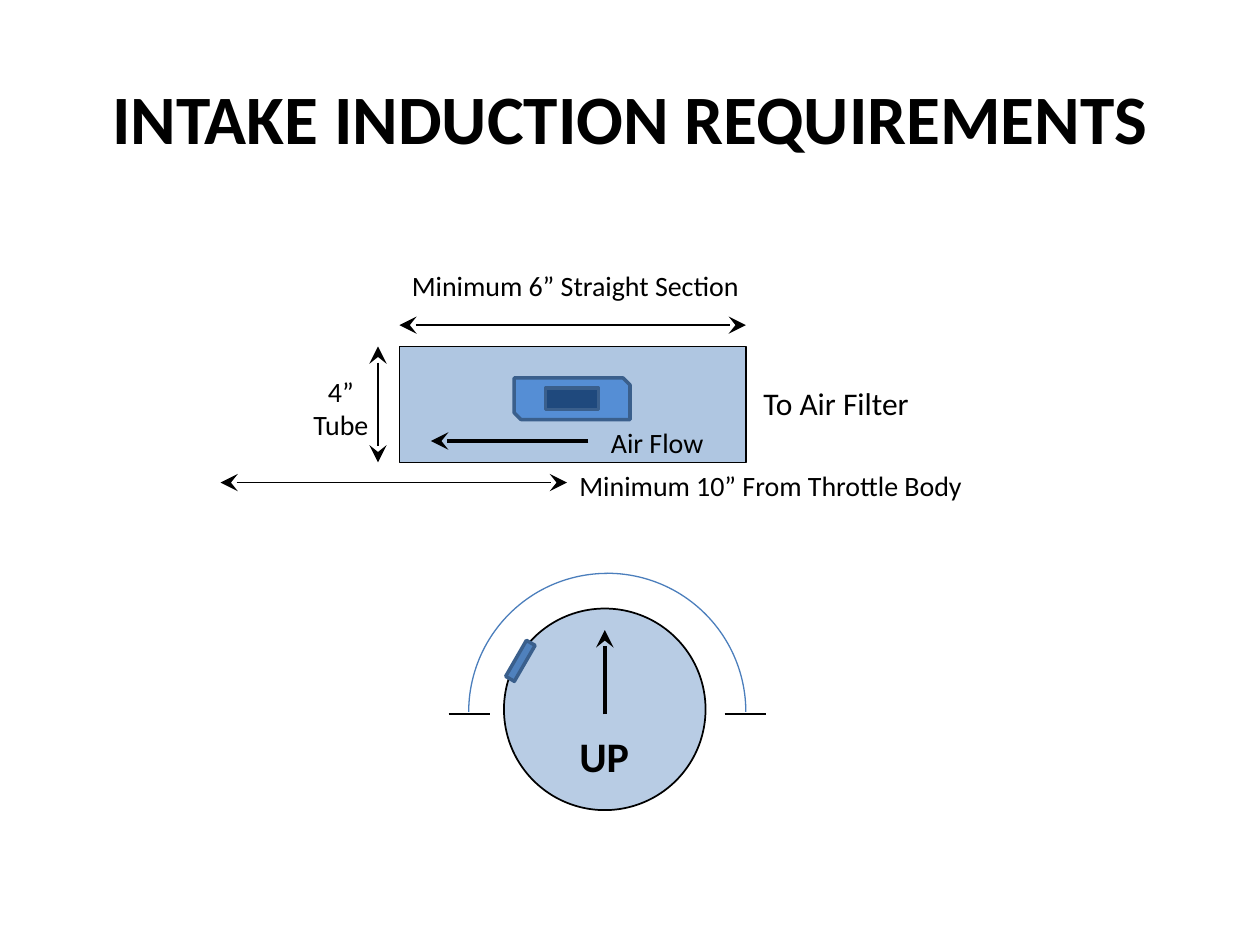
from lxml import etree
from pptx import Presentation
from pptx.dml.color import RGBColor
from pptx.enum.shapes import MSO_CONNECTOR, MSO_SHAPE as SHAPE
from pptx.enum.text import MSO_ANCHOR, PP_ALIGN
from pptx.oxml.ns import qn
from pptx.util import Inches, Pt


def color(value):
    return RGBColor.from_string(value)


prs = Presentation()
prs.slide_width, prs.slide_height = Inches(10), Inches(7.5)
s = prs.slides.add_slide(prs.slide_layouts[6])

# Tube with sensor, then tube cross-section:
# preset, left, top, width, height, rotation, fill, opacity %, line, line width
shapes = [
    (SHAPE.RECTANGLE, 3.17, 2.75, 2.75, 0.92, 0, "4F81BD", 45, "000000", 1),
    (SHAPE.SNIP_2_DIAG_RECTANGLE, 4.08, 3, 0.92, 0.33, 0, "558ED5", 100, "3A5F8C", 2),
    (SHAPE.RECTANGLE, 4.33, 3.08, 0.42, 0.17, 0, "1F497D", 100, "3A5F8C", 2),
    (SHAPE.ARC, 3.72, 4.55, 2.2, 2.2, 0, None, 100, "4B7EBC", 0.75),
    (SHAPE.ARC, 3.72, 4.55, 2.2, 2.2, 270, None, 100, "4B7EBC", 0.75),
    (SHAPE.OVAL, 4, 4.83, 1.6, 1.6, 0, "4F81BD", 40, "000000", 1),
    (SHAPE.RECTANGLE, 4.09, 5.08, 0.08, 0.33, 30, "4F81BD", 100, "3A5F8C", 2),
]
for preset, x, y, w, h, rotation, fill, opacity, line, width in shapes:
    sp = s.shapes.add_shape(preset, Inches(x), Inches(y), Inches(w), Inches(h))
    sp.shadow.inherit = False
    sp.rotation = rotation
    sp.line.color.rgb = color(line)
    sp.line.width = Pt(width)
    if fill is None:
        sp.fill.background()
        continue
    sp.fill.solid()
    sp.fill.fore_color.rgb = color(fill)
    if opacity < 100:
        srgb = sp._element.spPr.find(qn("a:solidFill")).find(qn("a:srgbClr"))
        etree.SubElement(srgb, qn("a:alpha"), val=str(opacity * 1000))

# Dimension lines, flow arrows and end ticks: x1, y1, x2, y2, width, arrow ends
lines = [
    (3.17, 2.58, 5.92, 2.58, 0.75, ("headEnd", "tailEnd")),
    (3, 2.75, 3, 3.67, 0.75, ("headEnd", "tailEnd")),
    (1.75, 3.83, 4.5, 3.83, 0.75, ("headEnd", "tailEnd")),
    (4.67, 3.5, 3.42, 3.5, 2, ("tailEnd",)),
    (4.8, 5.67, 4.8, 5, 2, ("tailEnd",)),
    (3.56, 5.67, 3.89, 5.67, 1.25, ()),
    (5.75, 5.67, 6.08, 5.67, 1.25, ()),
]
for x1, y1, x2, y2, width, ends in lines:
    c = s.shapes.add_connector(MSO_CONNECTOR.STRAIGHT, Inches(x1), Inches(y1),
                               Inches(x2), Inches(y2))
    c.line.color.rgb = color("000000")
    c.line.width = Pt(width)
    for end in ends:
        etree.SubElement(c.line._get_or_add_ln(), qn(f"a:{end}"),
                         type="stealth", w="lg", len="lg")
    etree.SubElement(c._element.spPr, qn("a:effectLst"))

# Labels: text, left, top, width, height, size, bold, wrap, alignment
LEFT, CENTER = PP_ALIGN.LEFT, PP_ALIGN.CENTER
labels = [
    ("INTAKE INDUCTION REQUIREMENTS", 0.5, 0.3, 9, 1.25, 39.6, True, True, CENTER),
    ("Minimum 6” Straight Section", 3.17, 2.08, 2.83, 0.37, 16, False, False, LEFT),
    ("4”\nTube", 2.33, 2.92, 0.75, 0.64, 16, False, True, CENTER),
    ("To Air Filter", 5.96, 3, 1.37, 0.4, 18, False, False, LEFT),
    ("Air Flow", 4.75, 3.33, 0.95, 0.37, 16, False, False, LEFT),
    ("Minimum 10” From Throttle Body", 4.5, 3.67, 3.28, 0.37, 16, False, False, LEFT),
    ("UP", 4.5, 5.75, 0.6, 0.5, 24, True, False, LEFT),
]
for text, x, y, w, h, size, bold, wrap, align in labels:
    tf = s.shapes.add_textbox(Inches(x), Inches(y), Inches(w), Inches(h)).text_frame
    tf.word_wrap = wrap
    tf.vertical_anchor = MSO_ANCHOR.MIDDLE if y < 1 else MSO_ANCHOR.TOP
    tf.text = text
    for p in tf.paragraphs:
        p.alignment = align
        p.font.name = "Calibri"
        p.font.size = Pt(size)
        p.font.bold = bold
        p.font.color.rgb = color("000000")

prs.save("out.pptx")
